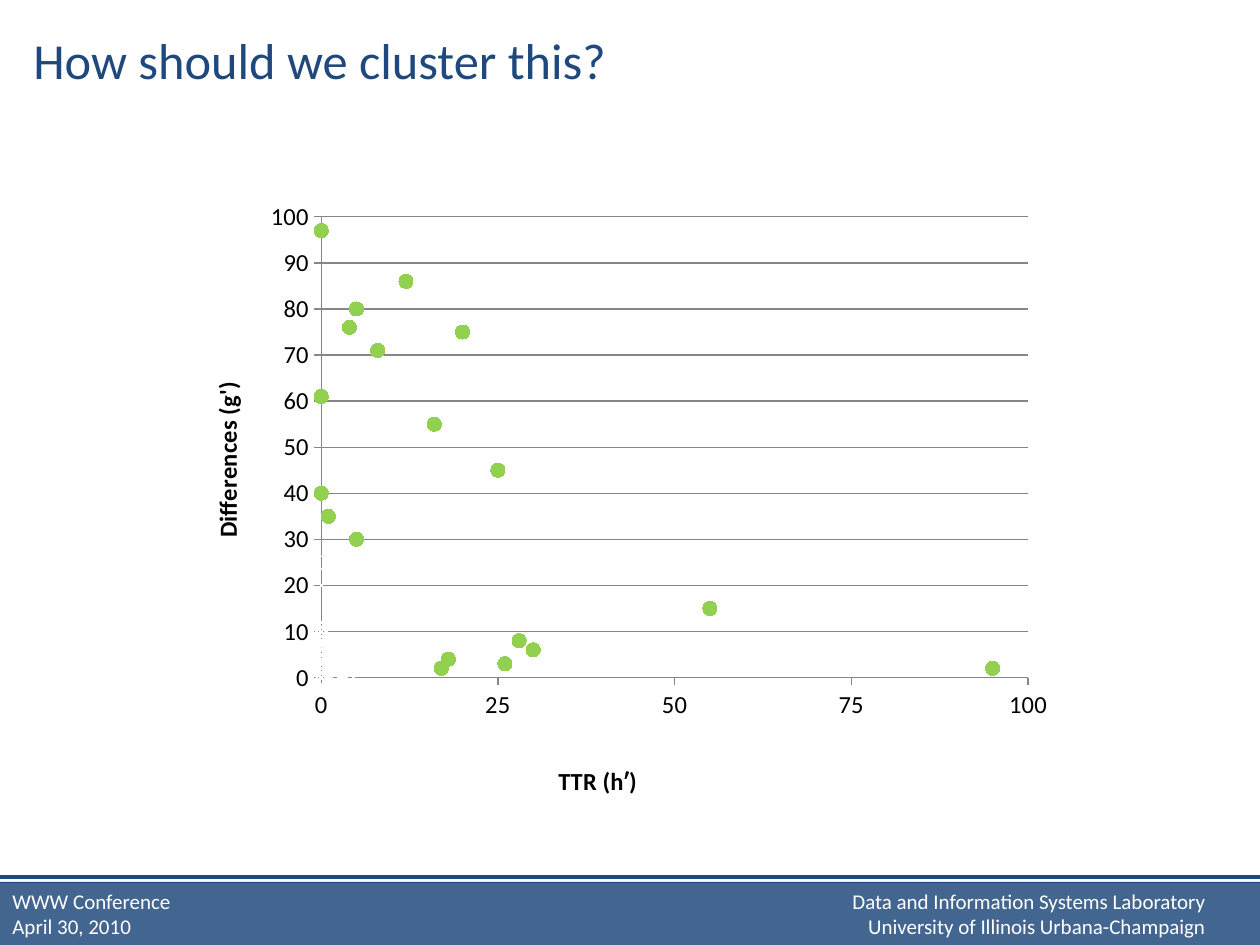
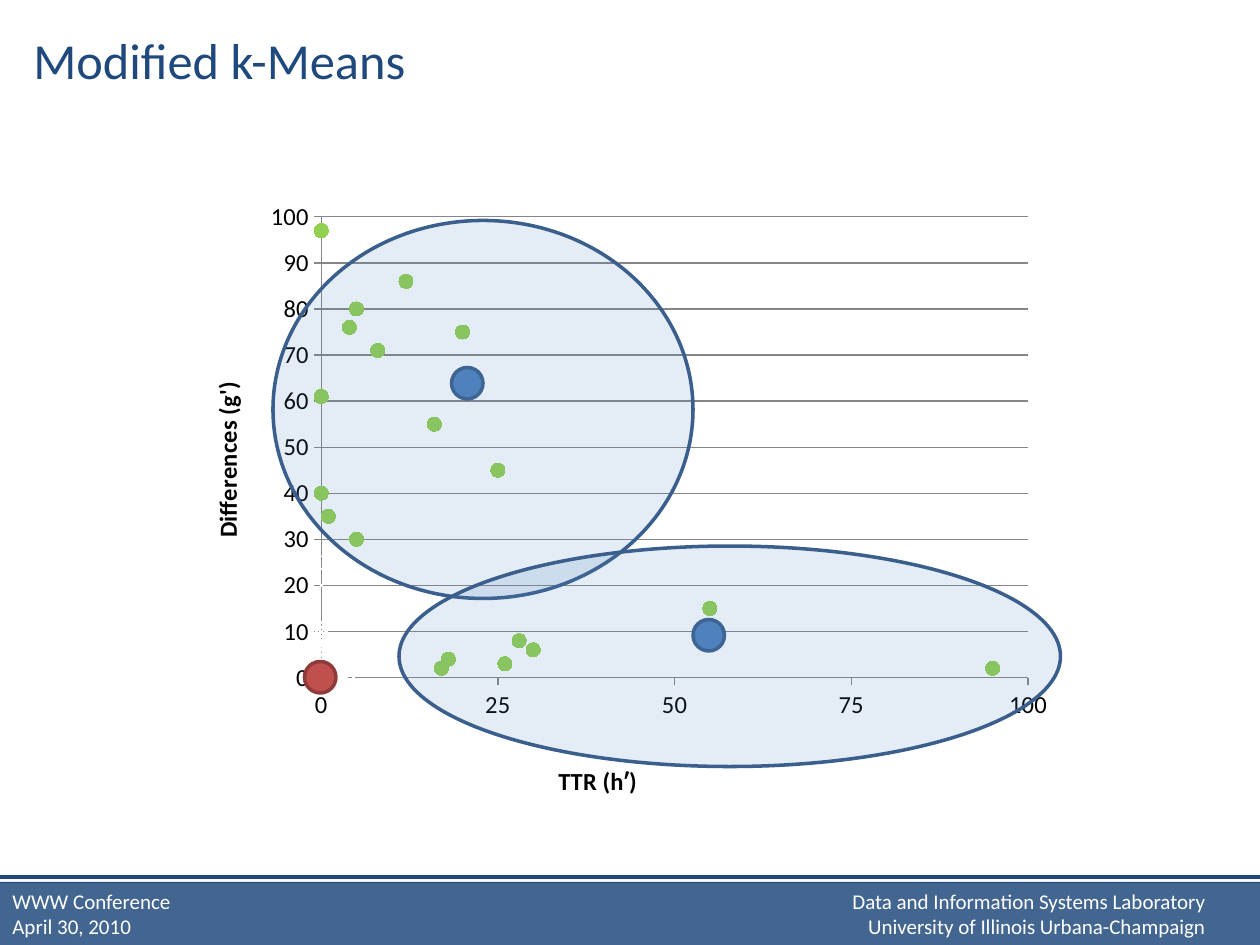
from dataclasses import dataclass
from itertools import zip_longest

from lxml import etree
from pptx import Presentation
from pptx.chart.data import XyChartData
from pptx.dml.color import RGBColor
from pptx.enum.chart import XL_CHART_TYPE, XL_MARKER_STYLE, XL_TICK_MARK
from pptx.enum.shapes import MSO_CONNECTOR, MSO_SHAPE
from pptx.enum.text import MSO_ANCHOR, PP_ALIGN
from pptx.oxml.ns import qn
from pptx.util import Pt

SCATTER = XL_CHART_TYPE.XY_SCATTER
CROSS_MARKER, ROUND_MARKER = XL_MARKER_STYLE.X, XL_MARKER_STYLE.CIRCLE
OUTSIDE_TICK = XL_TICK_MARK.OUTSIDE
STRAIGHT = MSO_CONNECTOR.STRAIGHT
RECTANGLE, ELLIPSE = MSO_SHAPE.RECTANGLE, MSO_SHAPE.OVAL
MIDDLE, BOTTOM = MSO_ANCHOR.MIDDLE, MSO_ANCHOR.BOTTOM
LEFT, RIGHT = PP_ALIGN.LEFT, PP_ALIGN.RIGHT


@dataclass(frozen=True)
class Theme:
    font: str = "Calibri"
    navy: str = "1F497D"
    white: str = "FFFFFF"
    black: str = "000000"
    grey: str = "868686"
    green: str = "92D050"
    blue: str = "4F81BD"
    blue_edge: str = "3A5F8C"
    red: str = "C0504D"
    red_edge: str = "8E3B39"
    title_size: float = 28.8
    chart_size: float = 14
    footer_size: float = 12


WIDTH, HEIGHT = 720, 540
BAND_TOP = 504

# Scatter data: x values, then y values; None marks a missing point
NEAR_ORIGIN = (
    [4, 4, 3, 3, 3, 2, 2, 1, 1, 0, 0, 0, 0, 0, 0, 0, 0, 1, 0, 0, 0.5,
     0, 0, 0, 0, 0, 0, 0, 0, 0, 1, 5, 5, 8, 6],
    [2, 1, 1, 2, 0, 2, 1, 0, 0, 0, 0, 1, 2, 2, 3, 4, 4, 5, 5, 6, 7,
     7, 8, 9, 9, 10, 10, 11, 12, 20, 25, 4, 3, 3, 3],
)
SPREAD = (
    [95, 55, 30, 28, 26, 18, 20, 17, None, None, None, None, 5, 5, 1, 0,
     25, None, 16, 0, None, 8, 4, None, 12, None, 0],
    [2, 15, 6, 8, 3, 4, 75, 2, None, None, None, None, 80, 30, 35, 40,
     45, None, 55, 61, None, 71, 76, None, 86, None, 97],
)


def set_layout(parent, inner=False, **fractions):
    """Place a chart part by fractions of the chart area."""
    layout = parent.find(qn("c:layout"))
    if layout is None:
        layout = etree.Element(qn("c:layout"))
        parent.insert(len(parent.findall(qn("c:tx"))), layout)
    manual = etree.SubElement(layout, qn("c:manualLayout"))
    settings = {"layoutTarget": "inner"} if inner else {}
    settings.update(xMode="edge", yMode="edge", **fractions)
    for name, value in settings.items():
        etree.SubElement(manual, qn(f"c:{name}")).set("val", str(value))


def clear_missing_points(chart):
    """Leave the cells of missing points empty in the chart."""
    for point in list(chart._chartSpace.iter(qn("c:pt"))):
        if point.find(qn("c:v")).text == "None":
            point.getparent().remove(point)


class SlideWriter:
    def __init__(self, theme):
        self.theme = theme
        self.deck = Presentation()
        self.deck.slide_width, self.deck.slide_height = Pt(WIDTH), Pt(HEIGHT)
        self.page = None

    def new_page(self, title):
        self.page = self.deck.slides.add_slide(self.deck.slide_layouts[6])
        self.footer()
        self.scatter()
        self.text([title], (12, 11.5, 648, 45), self.theme.title_size,
                  self.theme.navy, MIDDLE)

    def footer(self):
        theme = self.theme
        self.shape(RECTANGLE, (0, BAND_TOP, WIDTH, HEIGHT - BAND_TOP),
                   theme.navy, opacity=84)
        self.rule(BAND_TOP, 0.5)
        self.rule(BAND_TOP - 3, 2)
        for lines, left, width, align in (
            (["Data and Information Systems Laboratory",
              "University of Illinois Urbana-Champaign"], 468, 228, RIGHT),
            (["WWW Conference", "April 30, 2010"], 0, 198, LEFT),
        ):
            self.text(lines, (left, 510, width, 30), theme.footer_size,
                      theme.white, BOTTOM, align)

    def text(self, lines, area, size, color, anchor, align=LEFT):
        box = self.page.shapes.add_textbox(*map(Pt, area))
        frame = box.text_frame
        frame.word_wrap = True
        frame.vertical_anchor = anchor
        frame.text = "\n".join(lines)
        for para in frame.paragraphs:
            para.alignment = align
            self.style_font(para.font, size, color)

    def style_font(self, font, size, color):
        font.name, font.size = self.theme.font, Pt(size)
        font.color.rgb = RGBColor.from_string(color)

    def shape(self, kind, area, fill, edge=None, opacity=100):
        shape = self.page.shapes.add_shape(kind, *map(Pt, area))
        shape.shadow.inherit = False
        shape.fill.solid()
        shape.fill.fore_color.rgb = RGBColor.from_string(fill)
        if opacity < 100:
            color = shape._element.spPr.find(qn("a:solidFill"))[0]
            etree.SubElement(color, qn("a:alpha")).set("val", str(opacity * 1000))
        if edge:
            self.style_line(shape.line, edge, 2)
        else:
            shape.line.fill.background()

    def rule(self, top, weight):
        line = self.page.shapes.add_connector(
            STRAIGHT, Pt(0), Pt(top), Pt(WIDTH), Pt(top))
        self.style_line(line.line, self.theme.navy, weight)
        etree.SubElement(line._element.spPr, qn("a:effectLst"))

    def style_line(self, line, color, weight):
        line.color.rgb = RGBColor.from_string(color)
        line.width = Pt(weight)

    def scatter(self):
        theme = self.theme
        data = XyChartData()
        for name, points in (("Series 1", NEAR_ORIGIN), ("Series 2", SPREAD)):
            series = data.add_series(name)
            for x, y in zip_longest(*points):
                series.add_data_point(x, y)
        frame = self.page.shapes.add_chart(
            SCATTER, Pt(60), Pt(78), Pt(594), Pt(396), data)
        chart = frame.chart
        clear_missing_points(chart)
        chart.has_title = chart.has_legend = False
        self.style_font(chart.font, theme.chart_size, theme.black)
        plot = chart.plots[0]
        plot.vary_by_categories = False
        set_layout(chart._chartSpace.chart.plotArea, inner=True,
                   x=0.208, y=0.116, w=0.68, h=0.665)

        # Markers
        styles = ((CROSS_MARKER, theme.white), (ROUND_MARKER, theme.green))
        for series, (style, color) in zip(plot.series, styles):
            series.format.line.fill.background()
            marker = series.marker
            marker.style, marker.size = style, 8
            marker.format.fill.solid()
            marker.format.fill.fore_color.rgb = RGBColor.from_string(color)
            marker.format.line.fill.background()

        # Axes
        for axis, title, step, x, y in (
            (chart.category_axis, "TTR (hʹ)", 25, 0.432, 0.899),
            (chart.value_axis, "Differences (g')", 10, 0.097, 0.348),
        ):
            axis.minimum_scale, axis.maximum_scale = 0, 100
            axis.major_unit = step
            axis.major_tick_mark = OUTSIDE_TICK
            axis.has_major_gridlines = False
            self.style_line(axis.format.line, theme.grey, 0.75)
            frame = axis.axis_title.text_frame
            frame.text = title
            font = frame.paragraphs[0].runs[0].font
            self.style_font(font, theme.chart_size, theme.black)
            font.bold = True
            set_layout(axis.axis_title._element, x=x, y=y)
        frame._txBody.bodyPr.set("rot", "-5400000")
        frame._txBody.bodyPr.set("vert", "horz")
        chart.value_axis.has_major_gridlines = True
        self.style_line(chart.value_axis.major_gridlines.format.line,
                        theme.grey, 0.75)


def main():
    theme = Theme()
    writer = SlideWriter(theme)

    # Raw points
    writer.new_page("How should we cluster this?")

    # Points with centroids and cluster outlines
    writer.new_page("Modified k-Means")
    for left, top, fill, edge in (
        (258, 210, theme.blue, theme.blue_edge),
        (396, 354, theme.blue, theme.blue_edge),
        (174, 378, theme.red, theme.red_edge),
    ):
        writer.shape(ELLIPSE, (left, top, 18, 18), fill, edge)
    for cluster in ((156, 126, 240, 216), (228, 312, 378, 126)):
        writer.shape(ELLIPSE, cluster, theme.blue, theme.blue_edge, opacity=15)

    writer.deck.save("out.pptx")


if __name__ == "__main__":
    main()
